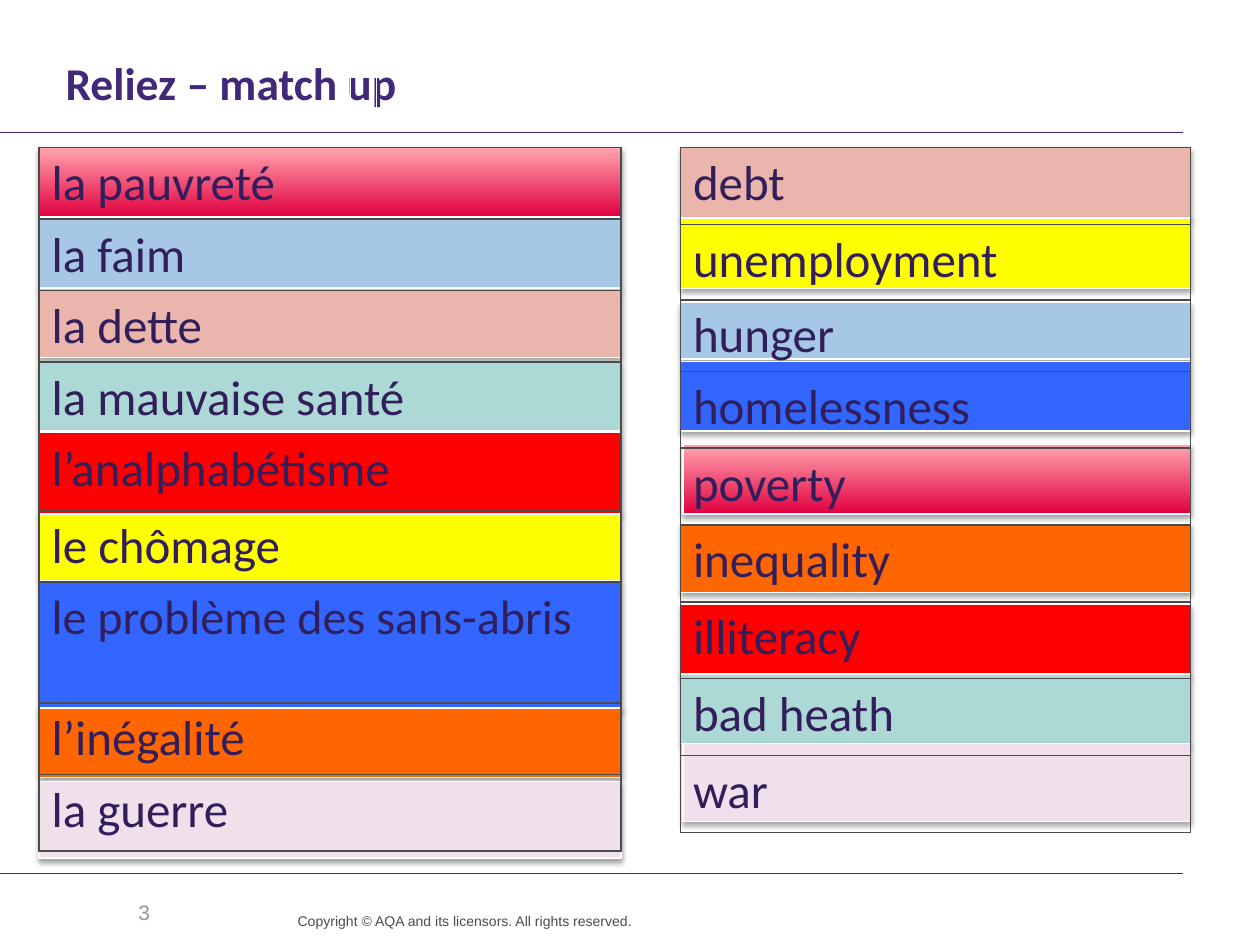
"""Build a French-English vocabulary matching slide."""
from lxml import etree
from pptx import Presentation
from pptx import util as u
from pptx.dml.color import RGBColor
from pptx.enum import shapes, text
from pptx.oxml import ns

COLOURS = {
    "purple": "412878", "word": "311E5A", "grey": "4B4B4B", "number": "969696",
    "white": "FFFFFF", "shadow": "000000", "crimson": "E10040", "pink": "FFA4AE",
    "sky": "A6C7E6", "salmon": "EAB6AC", "mint": "ACD8D5", "red": "FF0000",
    "yellow": "FFFF00", "blue": "3366FF", "orange": "FF6600", "lilac": "EFE0EC",
}
# Each row: word, band colour, row height, band top, band height, band indent.
FRENCH = [
    ("la pauvreté", "gradient", 0.57, 1.17, 0.55, 0),
    ("la faim", "sky", 0.55, 1.73, 0.55, 0),
    ("la dette", "salmon", 0.54, 2.29, 0.55, 0),
    ("la mauvaise santé", "mint", 0.53, 2.87, 0.55, 0),
    ("l’analphabétisme", "red", 0.61, 3.43, 0.65, 0),
    ("le chômage", "yellow", 0.52, 4.08, 0.53, 0),
    ("le problème des sans-abris", "blue", 0.96, 4.62, 1.01, 0),
    ("l’inégalité", "orange", 0.56, 5.62, 0.55, 0),
    ("la guerre", "lilac", 0.61, 6.2, 0.61, 0),
]
ENGLISH = [
    ("debt", "salmon", 0.61, 1.17, 0.56, 0),
    ("unemployment", "yellow", 0.6, 1.73, 0.56, 0),
    ("hunger", "sky", 0.53, 2.4, 0.45, 0),
    ("homelessness", "blue", 0.61, 2.87, 0.55, 0),
    ("poverty", "gradient", 0.61, 3.53, 0.55, 0.02),
    ("inequality", "orange", 0.61, 4.15, 0.55, 0),
    ("illiteracy", "red", 0.61, 4.8, 0.55, 0),
    ("bad heath", "mint", 0.61, 5.35, 0.55, 0),
    ("war", "lilac", 0.61, 5.9, 0.62, 0.02),
]


def rgb(name):
    """Return the named colour."""
    return RGBColor.from_string(COLOURS[name])


def inches(*values):
    """Convert numbers to lengths."""
    return [u.Inches(v) for v in values]


def sub(parent, tag, **attrs):
    """Append a DrawingML element."""
    el = etree.SubElement(parent, ns.qn(tag))
    for key, value in attrs.items():
        el.set(key, str(value))
    return el


def style(p, size, colour, font, bold=False):
    """Set the font of a paragraph."""
    p.font.size, p.font.name, p.font.bold = u.Pt(size), font, bold
    p.font.color.rgb = rgb(colour)


def add_box(s, *box):
    """Add an unfilled rectangle with a thin white outline."""
    sp = s.shapes.add_shape(shapes.MSO_SHAPE.RECTANGLE, *inches(*box))
    sp.shadow.inherit = False
    sp.fill.background()
    sp.line.color.rgb = rgb("white")
    sp.line.width = u.Pt(0.75)
    return sp


def add_band(s, colour, *box):
    """Add a coloured band with a soft shadow below."""
    sp = add_box(s, *box)
    if colour == "gradient":
        sp.fill.gradient()
        sp.fill.gradient_angle = 90
        for stop, name in zip(sp.fill.gradient_stops, ("crimson", "pink")):
            stop.color.rgb = rgb(name)
    else:
        sp.fill.solid()
        sp.fill.fore_color.rgb = rgb(colour)
    effects = sp._element.spPr.find(ns.qn("a:effectLst"))
    shadow = sub(effects, "a:outerShdw", blurRad=u.Pt(3.1), dist=u.Pt(1.8),
                 dir=5400000, rotWithShape=0)
    sub(sub(shadow, "a:srgbClr", val=COLOURS["shadow"]), "a:alpha", val=35000)


def add_borders(cell):
    """Draw a thin grey line on every side of a cell."""
    tc_pr = cell._tc.get_or_add_tcPr()
    for i, side in enumerate(("a:lnL", "a:lnR", "a:lnT", "a:lnB")):
        ln = etree.Element(ns.qn(side), w=str(u.Pt(1)))
        sub(sub(ln, "a:solidFill"), "a:srgbClr", val=COLOURS["grey"])
        tc_pr.insert(i, ln)


def add_words(s, rows, left, top, width):
    """Place a column of words over its coloured bands."""
    for _, colour, _, y, h, indent in rows:
        add_band(s, colour, left + indent, y, width - indent, h)
    height = sum(row[2] for row in rows)
    table = s.shapes.add_table(len(rows), 1, *inches(left, top, width, height)).table
    table.first_row = table.horz_banding = False
    for i, (word, _, h, *_) in enumerate(rows):
        table.rows[i].height = u.Inches(h)
        cell = table.cell(i, 0)
        cell.fill.background()
        add_borders(cell)
        cell.text = word
        size = 27.5 if len(word) > 20 else 28
        style(cell.text_frame.paragraphs[0], size, "word", "Calibri")


def add_rule(s, y, width):
    """Draw a purple rule from the left edge."""
    line = s.shapes.add_connector(shapes.MSO_CONNECTOR.STRAIGHT, *inches(0, y, width, y))
    line.line.color.rgb = rgb("purple")
    line.line.width = u.Pt(0.6)
    sub(line._element.spPr, "a:effectLst")


def add_title(s, left, top, width, height):
    """Place and format the title."""
    sp = s.shapes.title
    sp.left, sp.top, sp.width, sp.height = inches(left, top, width, height)
    tf = sp.text_frame
    tf.text = "Reliez – match up"
    tf.margin_left = tf.margin_top = tf.margin_bottom = 0
    tf.vertical_anchor = text.MSO_ANCHOR.TOP
    p = tf.paragraphs[0]
    p.alignment = text.PP_ALIGN.LEFT
    p.line_spacing = u.Pt(28)
    style(p, 26, "purple", "Calibri", True)


def add_footer(s, left, top):
    """Place the slide number and the copyright line."""
    number = add_box(s, left, top, 0.78, 0.38)
    number.text_frame.vertical_anchor = text.MSO_ANCHOR.MIDDLE
    notice = s.shapes.add_textbox(*inches(left + 1.58, top + 0.19, 2.93, 0.26))
    tf = notice.text_frame
    tf.word_wrap = True
    tf.margin_left = tf.margin_right = tf.margin_top = tf.margin_bottom = 0
    number.text_frame.text = "3"
    tf.text = "Copyright © AQA and its licensors. All rights reserved."
    tf.paragraphs[0].line_spacing = u.Pt(10)
    for sp, size, colour in ((number, 12, "number"), (notice, 8, "grey")):
        p = sp.text_frame.paragraphs[0]
        p.alignment = text.PP_ALIGN.RIGHT
        style(p, size, colour, "Arial")


def main():
    """Build and save the slide."""
    prs = Presentation()
    prs.slide_width, prs.slide_height = inches(10, 7.5)
    s = prs.slides.add_slide(prs.slide_layouts[5])
    for y in (1.05, 6.93):
        add_rule(s, y, 9.39)
    add_title(s, 0.52, 0.48, 8.8, 0.47)
    add_footer(s, 0.51, 7.05)
    add_words(s, FRENCH, 0.31, 1.17, 4.62)
    add_words(s, ENGLISH, 5.4, 1.17, 4.05)
    add_box(s, 2.78, 0.47, 0.21, 0.39)
    prs.save("out.pptx")


if __name__ == "__main__":
    main()
